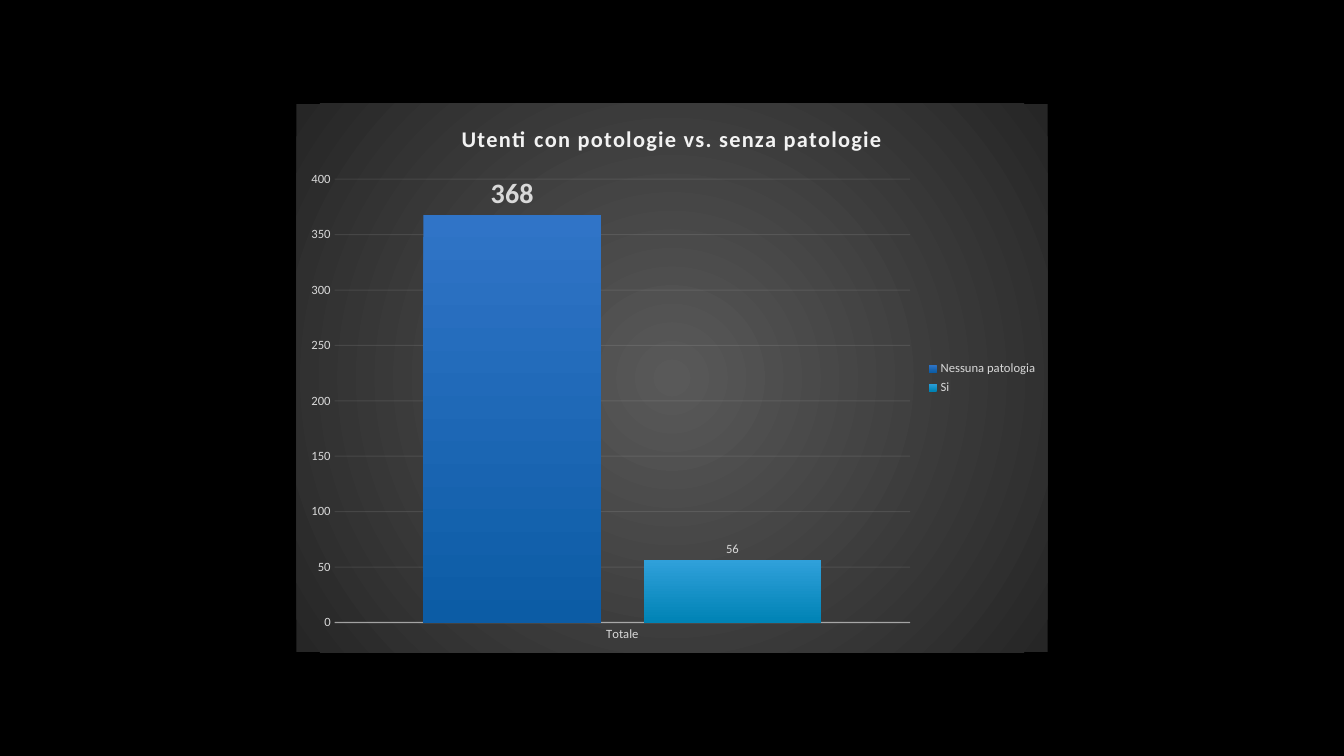
from lxml import etree
from pptx import Presentation
from pptx import util as u
from pptx.chart.data import CategoryChartData
from pptx.dml.color import RGBColor
from pptx.enum import chart as c
from pptx.oxml import parse_xml
from pptx.oxml.ns import nsdecls, qn

WIDTH, HEIGHT = u.Inches(13.33), u.Inches(7.5)
FONT = "Calibri"
BLACK = RGBColor(0x00, 0x00, 0x00)
WHITE = RGBColor(0xFF, 0xFF, 0xFF)
PALE = RGBColor(0xF2, 0xF2, 0xF2)
LIGHT = RGBColor(0xD9, 0xD9, 0xD9)
GLOW = RGBColor(0x59, 0x59, 0x59)
EDGE = RGBColor(0x26, 0x26, 0x26)
BLUE = RGBColor(0x30, 0x74, 0xC7), RGBColor(0x0C, 0x5C, 0xA5)
CYAN = RGBColor(0x2F, 0xA0, 0xDA), RGBColor(0x00, 0x83, 0xB5)
USERS = [
    ("Nessuna patologia", 368, BLUE, 20, True),
    ("Si", 56, CYAN, 9, False),
]


def style_font(font, size=9, color=LIGHT, bold=False):
    font.name = FONT
    font.size = u.Pt(size)
    font.bold = bold
    font.color.rgb = color


def write_text(frame, text, spacing=0, **style):
    run = frame.paragraphs[0].add_run()
    run.text = text
    style_font(run.font, **style)
    run.font._element.set("spc", str(spacing))


def style_line(line, width, opacity):
    line.width = u.Pt(width)
    line.color.rgb = PALE
    color = line._ln.find(".//" + qn("a:srgbClr"))
    etree.SubElement(color, qn("a:alpha")).set("val", str(opacity * 1000))


def fill_chart_area(chart, center, edge):
    chart.element.find(qn("c:chart")).addnext(parse_xml(
        f'<c:spPr {nsdecls("c", "a")}><a:gradFill><a:gsLst>'
        f'<a:gs pos="0"><a:srgbClr val="{center}"/></a:gs>'
        f'<a:gs pos="100000"><a:srgbClr val="{edge}"/></a:gs></a:gsLst>'
        '<a:path path="circle"><a:fillToRect l="50000" t="50000" '
        'r="50000" b="50000"/></a:path></a:gradFill>'
        '<a:ln><a:noFill/></a:ln></c:spPr>'))


def style_series(series, colors, label_size, label_bold):
    fill = series.format.fill
    fill.gradient()
    fill.gradient_angle = 270
    for stop, color in zip(fill.gradient_stops, colors):
        stop.color.rgb = color
    labels = series.data_labels
    labels.show_value = True
    labels.position = c.XL_LABEL_POSITION.OUTSIDE_END
    style_font(labels.font, size=label_size, bold=label_bold)


def style_axes(chart):
    for axis in (chart.category_axis, chart.value_axis):
        axis.major_tick_mark = axis.minor_tick_mark = c.XL_TICK_MARK.NONE
        style_font(axis.tick_labels.font)
    style_line(chart.category_axis.format.line, 1, 54)
    values = chart.value_axis
    values.minimum_scale, values.maximum_scale, values.major_unit = 0, 400, 50
    values.format.line.fill.background()
    values.has_major_gridlines = True
    style_line(values.major_gridlines.format.line, 0.75, 10)


def add_users_chart(slide):
    data = CategoryChartData()
    data.categories = ["Totale"]
    for name, count, *_ in USERS:
        data.add_series(name, [count])
    frame = slide.shapes.add_chart(
        c.XL_CHART_TYPE.COLUMN_CLUSTERED,
        u.Inches(2.94), u.Inches(1.03), u.Inches(7.45), u.Inches(5.44), data)
    chart = frame.chart
    style_font(chart.font, size=10, color=WHITE)
    fill_chart_area(chart, GLOW, EDGE)
    chart.has_title = True
    write_text(chart.chart_title.text_frame,
               "Utenti con potologie vs. senza patologie",
               spacing=100, size=16, color=PALE, bold=True)
    chart.has_legend = True
    chart.legend.position = c.XL_LEGEND_POSITION.RIGHT
    chart.legend.include_in_layout = False
    style_font(chart.legend.font)
    style_axes(chart)
    plot = chart.plots[0]
    plot.vary_by_categories = False
    plot.gap_width, plot.overlap = 100, -24
    for series, (_, _, colors, size, bold) in zip(plot.series, USERS):
        style_series(series, colors, size, bold)


def main():
    presentation = Presentation()
    presentation.slide_width, presentation.slide_height = WIDTH, HEIGHT
    slide = presentation.slides.add_slide(presentation.slide_layouts[6])
    slide.background.fill.solid()
    slide.background.fill.fore_color.rgb = BLACK
    add_users_chart(slide)
    presentation.save("out.pptx")


if __name__ == "__main__":
    main()
